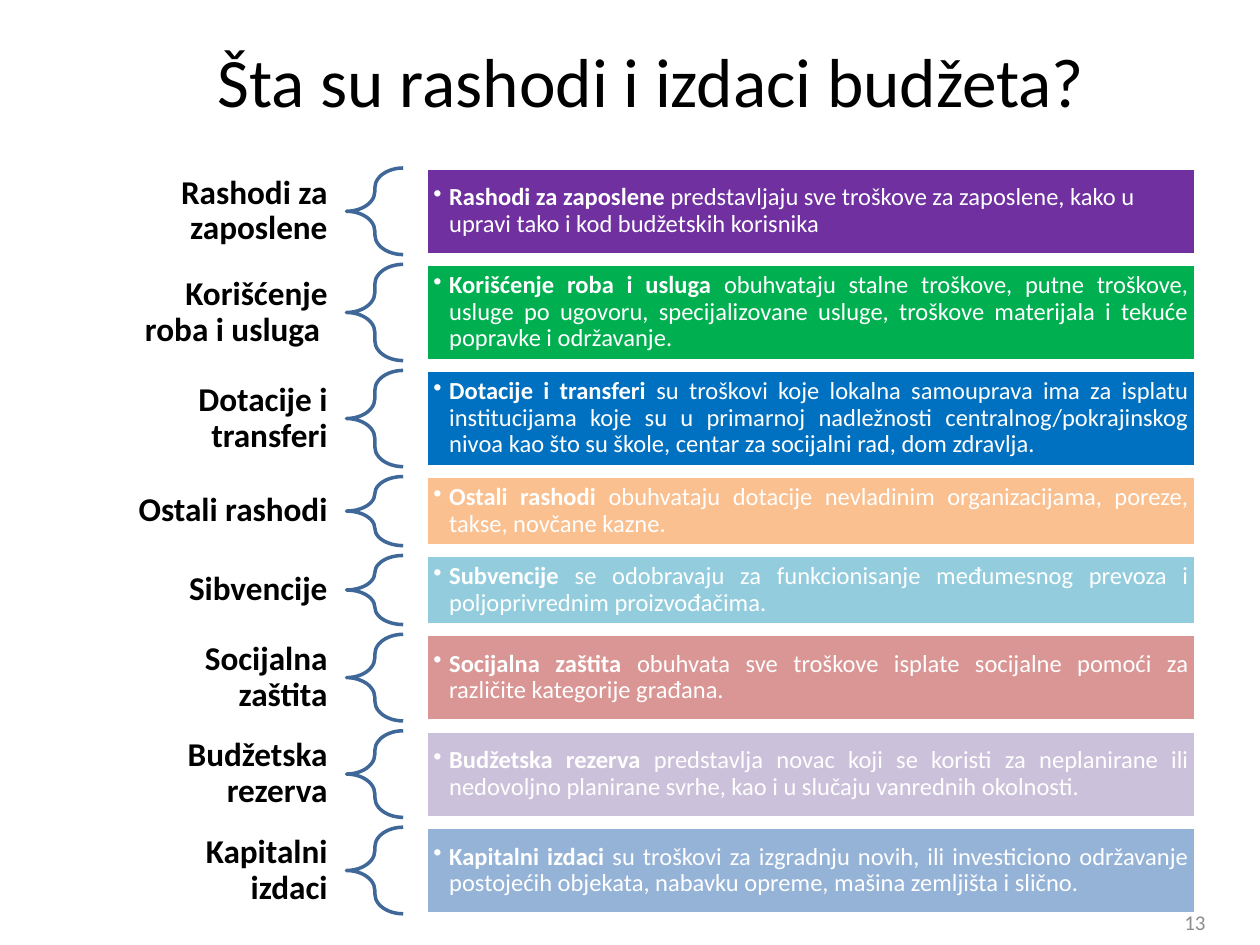
from lxml import etree
from pptx import Presentation
from pptx.dml.color import RGBColor
from pptx.enum.shapes import MSO_SHAPE
from pptx.enum.text import MSO_ANCHOR, MSO_AUTO_SIZE, PP_ALIGN
from pptx.oxml.ns import qn
from pptx.util import Pt

BRACE, BAR = MSO_SHAPE.LEFT_BRACE, MSO_SHAPE.RECTANGLE
LEFT, CENTER, RIGHT, JUSTIFY = PP_ALIGN.LEFT, PP_ALIGN.CENTER, PP_ALIGN.RIGHT, PP_ALIGN.JUSTIFY
MIDDLE = MSO_ANCHOR.MIDDLE

FIRST_TOP, ROW_GAP = 96, 5.6
LABEL_LEFT, LABEL_WIDTH = 36, 162
BRACE_LEFT, BRACE_WIDTH = 198, 32.4
BAR_LEFT, BAR_WIDTH = 243.5, 440
ONE_LINE, TWO_LINES = 29.5, 49.5
LOW, MEDIUM, HIGH = 39.5, 49.5, 55
BULLET_INDENT = 9

# label, label height, bar height, bar colour, alignment, bold term, explanation
EXPENSES = [
    ("Rashodi za zaposlene", TWO_LINES, MEDIUM, "7030A0", LEFT, "Rashodi za zaposlene ",
     "predstavljaju sve troškove za zaposlene, kako u upravi tako i kod budžetskih korisnika"),
    ("Korišćenje\nroba i usluga ", TWO_LINES, HIGH, "00B050", JUSTIFY, "Korišćenje roba i usluga ",
     "obuhvataju stalne troškove, putne troškove, usluge po ugovoru, specijalizovane usluge, "
     "troškove materijala i tekuće popravke i održavanje."),
    ("Dotacije i transferi", TWO_LINES, HIGH, "0070C0", JUSTIFY, "Dotacije i transferi ",
     "su troškovi koje lokalna samouprava ima za isplatu institucijama koje su u primarnoj "
     "nadležnosti centralnog/pokrajinskog nivoa kao što su škole, centar za socijalni rad, "
     "dom zdravlja."),
    ("Ostali rashodi", ONE_LINE, LOW, "FAC090", JUSTIFY, "Ostali rashodi ",
     "obuhvataju dotacije nevladinim organizacijama, poreze, takse, novčane kazne."),
    ("Sibvencije", ONE_LINE, LOW, "93CDDD", JUSTIFY, "Subvencije ",
     "se odobravaju za funkcionisanje međumesnog prevoza i poljoprivrednim proizvođačima."),
    ("Socijalna\nzaštita", TWO_LINES, MEDIUM, "D99694", JUSTIFY, "Socijalna zaštita ",
     "obuhvata sve troškove isplate socijalne pomoći za različite kategorije građana."),
    ("Budžetska rezerva", TWO_LINES, MEDIUM, "CCC1DA", JUSTIFY, "Budžetska rezerva ",
     "predstavlja novac koji se koristi za neplanirane ili nedovoljno planirane svrhe, "
     "kao i u slučaju vanrednih okolnosti."),
    ("Kapitalni\nizdaci", TWO_LINES, MEDIUM, "95B3D7", JUSTIFY, "Kapitalni izdaci ",
     "su troškovi za izgradnju novih, ili investiciono održavanje postojećih objekata, "
     "nabavku opreme, mašina zemljišta i slično."),
]


def color(hex_value):
    return RGBColor.from_string(hex_value)


def points(*lengths):
    return [Pt(length) for length in lengths]


def set_attributes(target, values):
    for name, value in values.items():
        setattr(target, name, value)


def format_run(run, size, hex_value, bold=False):
    set_attributes(run.font, {"name": "Calibri", "size": Pt(size), "bold": bold})
    run.font.color.rgb = color(hex_value)


def format_frame(frame, side_inset, edge_inset):
    set_attributes(frame, {
        "word_wrap": True, "auto_size": MSO_AUTO_SIZE.NONE, "vertical_anchor": MIDDLE,
        "margin_left": Pt(side_inset), "margin_right": Pt(side_inset),
        "margin_top": Pt(edge_inset), "margin_bottom": Pt(edge_inset)})


def add_bullet(paragraph):
    properties = paragraph._p.get_or_add_pPr()
    properties.set("marL", str(Pt(BULLET_INDENT)))
    properties.set("indent", str(-Pt(BULLET_INDENT)))
    etree.SubElement(properties, qn("a:buChar")).set("char", "•")


def add_title(slide, text):
    title = slide.shapes.title
    left, top, width, height = points(48, 21, 648, 49)
    set_attributes(title, {"left": left, "top": top, "width": width, "height": height})
    format_frame(title.text_frame, 7.2, 3.6)
    heading = title.text_frame.paragraphs[0]
    heading.text = text
    heading.alignment = CENTER
    format_run(heading.runs[0], 39.6, "000000")


def add_right_text(slide, box, text, size, hex_value, bold, side_inset, line_spacing):
    frame = slide.shapes.add_textbox(*points(*box)).text_frame
    format_frame(frame, side_inset, 3.6)
    paragraph = frame.paragraphs[0]
    paragraph.text = text
    set_attributes(paragraph, {"alignment": RIGHT, "line_spacing": line_spacing})
    for run in paragraph.runs:
        format_run(run, size, hex_value, bold)


def add_outlined(slide, preset, box, line_color):
    shape = slide.shapes.add_shape(preset, *points(*box))
    shape.shadow.inherit = False
    shape.line.color.rgb = color(line_color)
    shape.line.width = Pt(2)
    return shape


def add_brace(slide, top, height):
    brace = add_outlined(slide, BRACE, (BRACE_LEFT, top, BRACE_WIDTH, height), "3F6797")
    brace.fill.background()
    brace.adjustments[0] = 0.35
    brace.adjustments[1] = 0.5


def add_bar(slide, top, height, fill, alignment, term, explanation):
    bar = add_outlined(slide, BAR, (BAR_LEFT, top, BAR_WIDTH, height), "FFFFFF")
    bar.fill.solid()
    bar.fill.fore_color.rgb = color(fill)
    format_frame(bar.text_frame, 4.2, 4.2)
    paragraph = bar.text_frame.paragraphs[0]
    set_attributes(paragraph, {"alignment": alignment, "line_spacing": 0.9})
    add_bullet(paragraph)
    for text, bold in ((term, True), (explanation, False)):
        run = paragraph.add_run()
        run.text = text
        format_run(run, 14, "FFFFFF", bold)


def main():
    presentation = Presentation()
    set_attributes(presentation, {"slide_width": Pt(720), "slide_height": Pt(540)})
    slide = presentation.slides.add_slide(presentation.slide_layouts[5])
    add_title(slide, "Šta su rashodi i izdaci budžeta?")

    top = FIRST_TOP
    for label, label_height, height, fill, alignment, term, explanation in EXPENSES:
        label_top = top + (height - label_height) / 2
        add_right_text(slide, (LABEL_LEFT, label_top, LABEL_WIDTH, label_height),
                       label, 19, "000000", True, 10.8, 0.9)
        add_brace(slide, top, height)
        add_bar(slide, top, height, fill, alignment, term, explanation)
        top += height + ROW_GAP

    add_right_text(slide, (528, 512.5, 168, 29), "13", 12, "8C8C8C", False, 7.2, 1.0)
    presentation.save("out.pptx")


if __name__ == "__main__":
    main()
